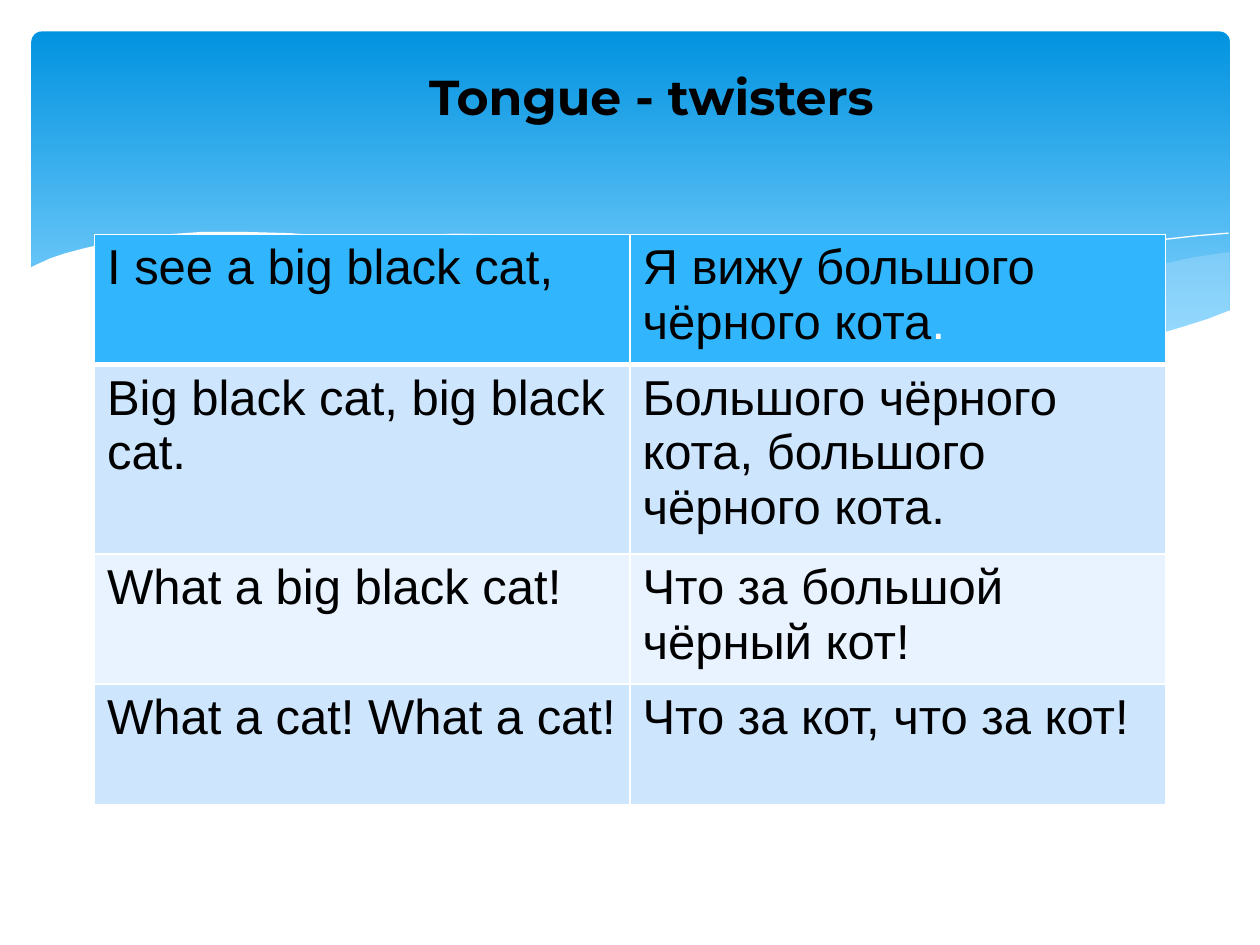
from lxml import etree
from pptx import Presentation
from pptx import util as u
from pptx.dml.color import RGBColor
from pptx.enum import shapes, text
from pptx.oxml.ns import qn

WHITE = RGBColor(0xFF, 0xFF, 0xFF)
BLACK = RGBColor(0x00, 0x00, 0x00)
SKY_TOP = RGBColor(0x02, 0x93, 0xE0)
SKY_BOTTOM = RGBColor(0x83, 0xD3, 0xFE)
WAVE_BLUE = RGBColor(0xC6, 0xE7, 0xFC)
HEADER_BLUE = RGBColor(0x31, 0xB6, 0xFD)
BAND_DARK = RGBColor(0xCE, 0xE5, 0xFE)
BAND_LIGHT = RGBColor(0xE8, 0xF3, 0xFF)

RIGHT_WAVE = [
    (9.76, 2), (9.48, 2.04), (9.21, 2.1), (8.91, 2.16), (8.61, 2.23), (8.05, 2.37),
    (7.53, 2.48), (7.06, 2.57), (6.61, 2.65), (6.91, 2.69), (7.19, 2.72), (7.45, 2.75),
    (7.69, 2.77), (8.03, 2.78), (8.35, 2.77), (8.63, 2.75), (8.89, 2.72), (9.13, 2.67),
    (9.35, 2.62), (9.63, 2.52), (9.76, 2.47),
]
MIDDLE_WAVE = [
    (8.93, 2.73), (8.66, 2.69), (8.07, 2.6), (7.41, 2.47), (6.68, 2.31), (6.29, 2.22),
    (5.98, 2.14), (5.69, 2.08), (5.41, 2.03), (5.14, 1.98), (4.89, 1.94), (4.42, 1.89),
    (3.99, 1.86), (3.61, 1.85), (3.28, 1.87), (2.86, 1.91), (3.23, 1.96), (3.62, 2.03),
    (4.04, 2.11), (4.49, 2.22), (4.91, 2.32), (5.3, 2.4), (5.84, 2.52), (6.34, 2.61),
    (6.8, 2.68), (7.22, 2.74), (7.61, 2.77), (8.07, 2.78), (8.48, 2.77),
]
LONG_CREST = [
    (3.09, 1.95), (3.28, 1.92), (3.53, 1.89), (3.87, 1.87), (4.33, 1.87), (4.89, 1.9),
    (5.33, 1.94), (5.82, 2), (6.36, 2.08), (6.95, 2.19), (7.6, 2.33), (8.31, 2.51),
    (9.07, 2.72),
]
SHORT_CREST = [
    (6.13, 2.57), (6.53, 2.46), (6.95, 2.35), (7.48, 2.23), (8.06, 2.1), (8.66, 1.99),
    (8.95, 1.94), (9.24, 1.9), (9.51, 1.87), (9.75, 1.85),
]
WHITE_WAVE = [
    (9.77, 2.46), (9.59, 2.53), (9.4, 2.59), (9.2, 2.65), (8.99, 2.69), (8.75, 2.73),
    (8.5, 2.75), (8.09, 2.77), (7.78, 2.76), (7.44, 2.74), (7.08, 2.7), (6.68, 2.65),
    (6.26, 2.58), (5.79, 2.5), (5.29, 2.39), (4.75, 2.27), (4.18, 2.13), (3.65, 2.02),
    (3.16, 1.94), (2.71, 1.88), (2.3, 1.85), (1.93, 1.84), (1.61, 1.84), (1.32, 1.86),
    (1.06, 1.89), (0.85, 1.93), (0.67, 1.97), (0.52, 2.01), (0.4, 2.05), (0.29, 2.1),
    (0.23, 2.13), (0.23, 3.29), (9.77, 3.29),
]
VERSES = [
    ("I see a big black cat,", "Я вижу большого чёрного кота."),
    ("Big black cat, big black cat.", "Большого чёрного кота, большого чёрного кота."),
    ("What a big black cat!", "Что за большой чёрный кот!"),
    ("What a cat! What a cat!", "Что за кот, что за кот!"),
]
ROW_FILLS = [HEADER_BLUE, BAND_DARK, BAND_LIGHT, BAND_DARK]
ROW_HEIGHTS = [0.96, 1.4, 0.96, 0.96]


def add_sky(slide):
    sky = slide.shapes.add_shape(
        shapes.MSO_SHAPE.ROUNDED_RECTANGLE,
        u.Inches(0.25), u.Inches(0.25), u.Inches(9.51), u.Inches(2.7),
    )
    sky.adjustments[0] = 0.03
    sky.shadow.inherit = False
    sky.line.fill.background()
    sky.fill.gradient()
    sky.fill.gradient_angle = 270
    stops = sky.fill.gradient_stops
    for stop, position, color in zip(stops, (0, 0.9), (SKY_TOP, SKY_BOTTOM)):
        stop.position = position
        stop.color.rgb = color


def add_outline(slide, points, closed):
    corners = [(u.Inches(x), u.Inches(y)) for x, y in points]
    builder = slide.shapes.build_freeform(*corners[0])
    builder.add_line_segments(corners[1:], close=closed)
    shape = builder.convert_to_shape()
    shape.shadow.inherit = False
    return shape


def add_wave(slide, points, color, opacity=100):
    wave = add_outline(slide, points, True)
    wave.line.fill.background()
    wave.fill.solid()
    wave.fill.fore_color.rgb = color
    if opacity < 100:
        color_element = wave.fill._xPr.find(qn("a:solidFill"))[0]
        etree.SubElement(color_element, qn("a:alpha"), val=str(opacity * 1000))


def add_crest(slide, points):
    crest = add_outline(slide, points, False)
    crest.fill.background()
    crest.line.color.rgb = WHITE
    crest.line.width = u.Pt(0)


def format_run(run, font_name, color=BLACK, bold=False):
    run.font.name = font_name
    run.font.size = u.Pt(28)
    run.font.bold = bold
    run.font.color.rgb = color


def add_title(slide, title):
    box = slide.shapes.add_textbox(u.Inches(0.67), u.Inches(0.21), u.Inches(9), u.Inches(1.1))
    frame = box.text_frame
    frame.word_wrap = True
    frame.vertical_anchor = text.MSO_ANCHOR.MIDDLE
    frame.text = title
    paragraph = frame.paragraphs[0]
    paragraph.alignment = text.PP_ALIGN.CENTER
    format_run(paragraph.runs[0], "Montserrat", bold=True)


def set_borders(cell, **widths):
    properties = cell._tc.get_or_add_tcPr()
    for side in "LRTB":
        width = u.Pt(widths.get(side, 1))
        line = etree.SubElement(properties, qn(f"a:ln{side}"), w=str(width))
        fill = etree.SubElement(line, qn("a:solidFill"))
        etree.SubElement(fill, qn("a:srgbClr"), val=str(WHITE))


def fill_cell(cell, verse, color):
    cell.fill.solid()
    cell.fill.fore_color.rgb = color
    cell.text = verse
    format_run(cell.text_frame.paragraphs[0].runs[0], "Arial")


def add_verses(slide):
    table = slide.shapes.add_table(
        len(VERSES), 2, u.Inches(0.75), u.Inches(1.86), u.Inches(8.5), u.Inches(sum(ROW_HEIGHTS))
    ).table
    for row_index, verses in enumerate(VERSES):
        table.rows[row_index].height = u.Inches(ROW_HEIGHTS[row_index])
        widths = {0: {"B": 3}, 1: {"T": 3}}.get(row_index, {})
        for column_index, verse in enumerate(verses):
            cell = table.cell(row_index, column_index)
            set_borders(cell, **widths)
            fill_cell(cell, verse, ROW_FILLS[row_index])
    paragraph = table.cell(0, 1).text_frame.paragraphs[0]
    paragraph.runs[0].text = VERSES[0][1].rstrip(".")
    full_stop = paragraph.add_run()
    full_stop.text = "."
    format_run(full_stop, "Arial", WHITE)


def main():
    presentation = Presentation()
    presentation.slide_width = u.Inches(10)
    presentation.slide_height = u.Inches(7.5)
    slide = presentation.slides.add_slide(presentation.slide_layouts[6])
    add_sky(slide)
    add_wave(slide, RIGHT_WAVE, WAVE_BLUE, 29)
    add_wave(slide, MIDDLE_WAVE, WAVE_BLUE, 40)
    add_crest(slide, LONG_CREST)
    add_crest(slide, SHORT_CREST)
    add_wave(slide, WHITE_WAVE, WHITE)
    add_title(slide, "Tongue - twisters")
    add_verses(slide)
    presentation.save("out.pptx")


if __name__ == "__main__":
    main()
